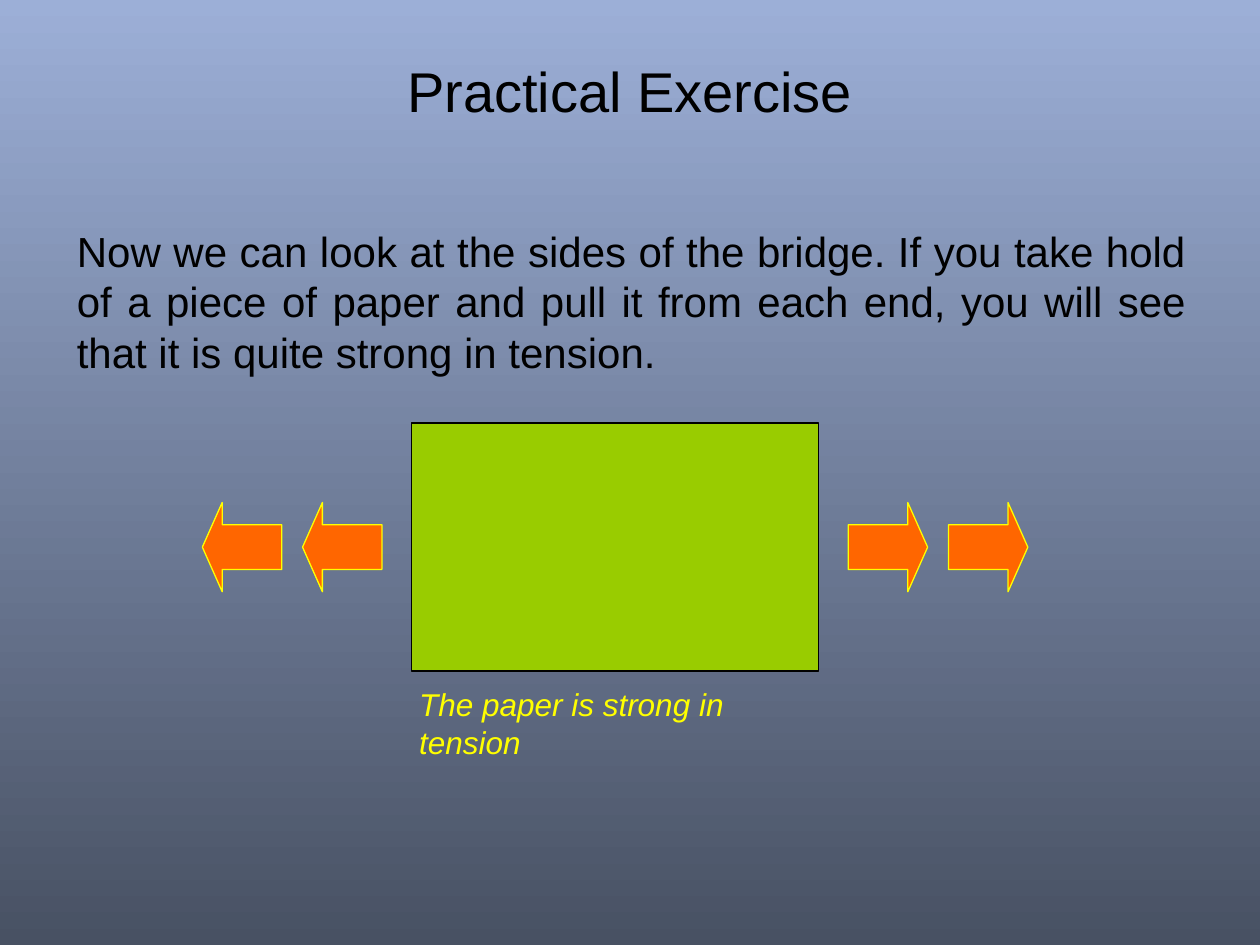
from dataclasses import dataclass

from pptx import Presentation
from pptx.dml.color import RGBColor
from pptx.enum.shapes import MSO_SHAPE
from pptx.enum.text import MSO_ANCHOR, PP_ALIGN
from pptx.util import Cm, Pt

RECTANGLE = MSO_SHAPE.RECTANGLE
LEFT_ARROW = MSO_SHAPE.LEFT_ARROW
TOP, MIDDLE = MSO_ANCHOR.TOP, MSO_ANCHOR.MIDDLE
LEFT, CENTER, JUSTIFY = PP_ALIGN.LEFT, PP_ALIGN.CENTER, PP_ALIGN.JUSTIFY
TITLE_ONLY = 5


@dataclass(frozen=True)
class Theme:
    font: str = "Arial"
    sky: str = "9CAFD7"
    dusk: str = "485163"
    ink: str = "000000"
    highlight: str = "FFFF00"
    paper: str = "99CC00"
    pull: str = "FF6600"
    title_size: int = 32
    body_size: int = 24
    caption_size: int = 18
    outline: float = 0.75


THEME = Theme()


def rgb(value):
    return RGBColor.from_string(value)


def place(shape, box):
    shape.left, shape.top, shape.width, shape.height = (Cm(v) for v in box)


def write(shape, text, *, size, color=THEME.ink, align=LEFT, anchor=TOP, italic=False):
    frame = shape.text_frame
    frame.word_wrap = True
    frame.vertical_anchor = anchor
    paragraph = frame.paragraphs[0]
    paragraph.alignment = align
    run = paragraph.add_run()
    run.text = text
    run.font.name = THEME.font
    run.font.size = Pt(size)
    run.font.italic = italic
    run.font.color.rgb = rgb(color)


def add_text(slide, box, text, **text_format):
    area = slide.shapes.add_textbox(*(Cm(v) for v in box))
    write(area, text, **text_format)


def add_figure(slide, preset, box, fill, line):
    figure = slide.shapes.add_shape(preset, *(Cm(v) for v in box))
    figure.shadow.inherit = False
    figure.fill.solid()
    figure.fill.fore_color.rgb = rgb(fill)
    figure.line.color.rgb = rgb(line)
    figure.line.width = Pt(THEME.outline)
    return figure


def paint_background(slide):
    fill = slide.background.fill
    fill.gradient()
    fill.gradient_angle = 270
    for stop, color, position in zip(fill.gradient_stops, (THEME.sky, THEME.dusk), (0, 1)):
        stop.color.rgb = rgb(color)
        stop.position = position


def add_title(slide, box):
    title = slide.shapes.title
    place(title, box)
    write(title, "Practical Exercise", size=THEME.title_size, align=CENTER, anchor=MIDDLE)


def add_tension_diagram(slide, box):
    left, top, width, height = box
    arrow_width, arrow_height = 1.6, 1.8
    paper_gap, arrow_gap = 0.6, 0.42
    add_text(slide, (left - 0.1, top + height + 0.16, 8.69, 1.02),
             "The paper is strong in tension", size=THEME.caption_size,
             color=THEME.highlight, italic=True)
    add_figure(slide, RECTANGLE, box, THEME.paper, THEME.ink)
    arrow_top = top + (height - arrow_height) / 2
    for index in range(2):
        offset = paper_gap + index * (arrow_width + arrow_gap)
        for arrow_left, rotation in ((left - offset - arrow_width, 0),
                                     (left + width + offset, 180)):
            arrow = add_figure(slide, LEFT_ARROW,
                               (arrow_left, arrow_top, arrow_width, arrow_height),
                               THEME.pull, THEME.highlight)
            arrow.adjustments[0] = 0.5
            arrow.adjustments[1] = 0.25
            arrow.rotation = rotation


def main():
    deck = Presentation()
    deck.slide_width, deck.slide_height = Cm(25.4), Cm(19.05)
    slide = deck.slides.add_slide(deck.slide_layouts[TITLE_ONLY])
    paint_background(slide)
    add_title(slide, (1.27, 0.23, 22.86, 3.18))
    add_text(slide, (1.3, 4.42, 22.86, 12.57),
             "Now we can look at the sides of the bridge. If you take hold of a piece "
             "of paper and pull it from each end, you will see that it is quite strong "
             "in tension.", size=THEME.body_size, align=JUSTIFY)
    add_tension_diagram(slide, (8.3, 8.53, 8.2, 5))
    deck.save("out.pptx")


if __name__ == "__main__":
    main()
